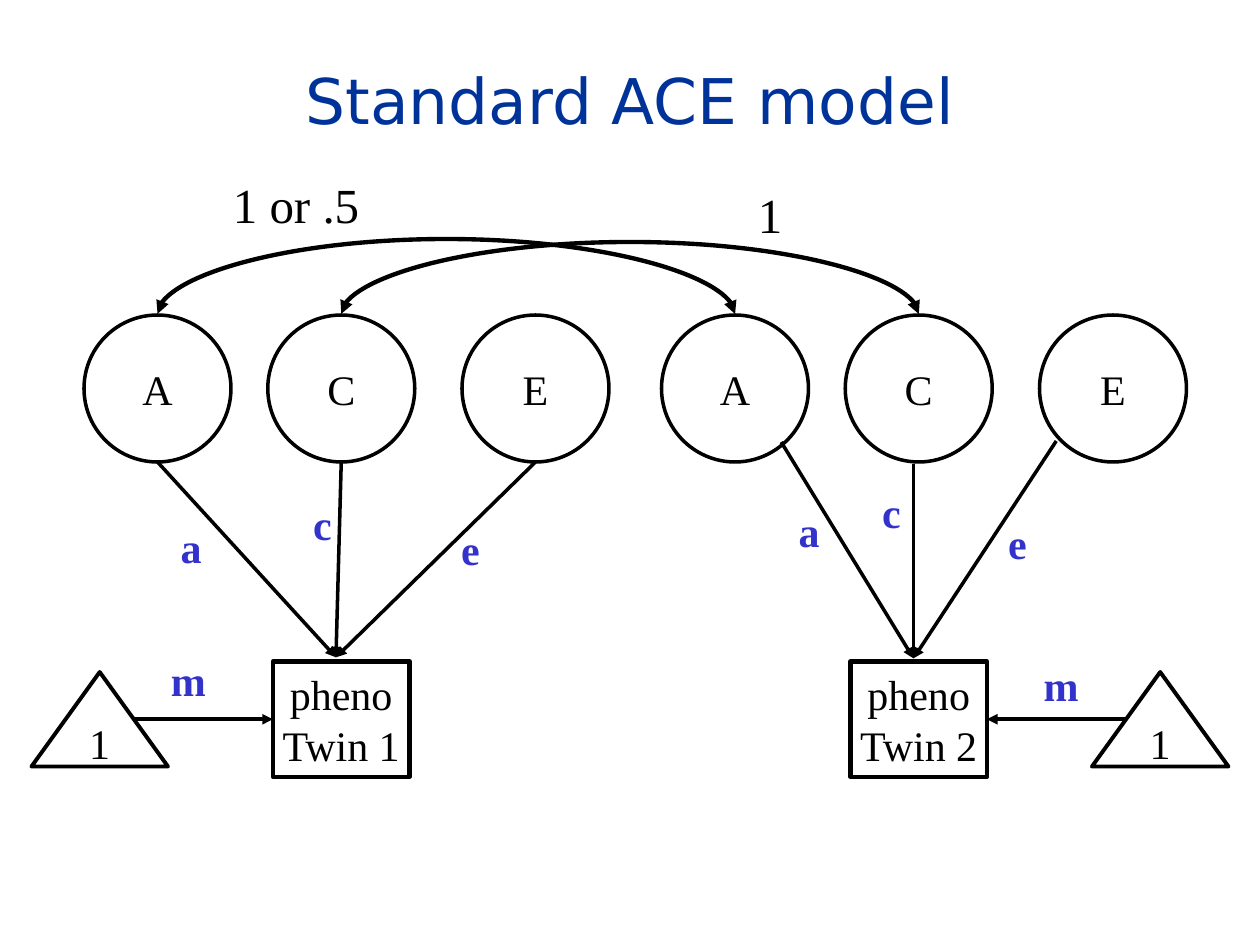
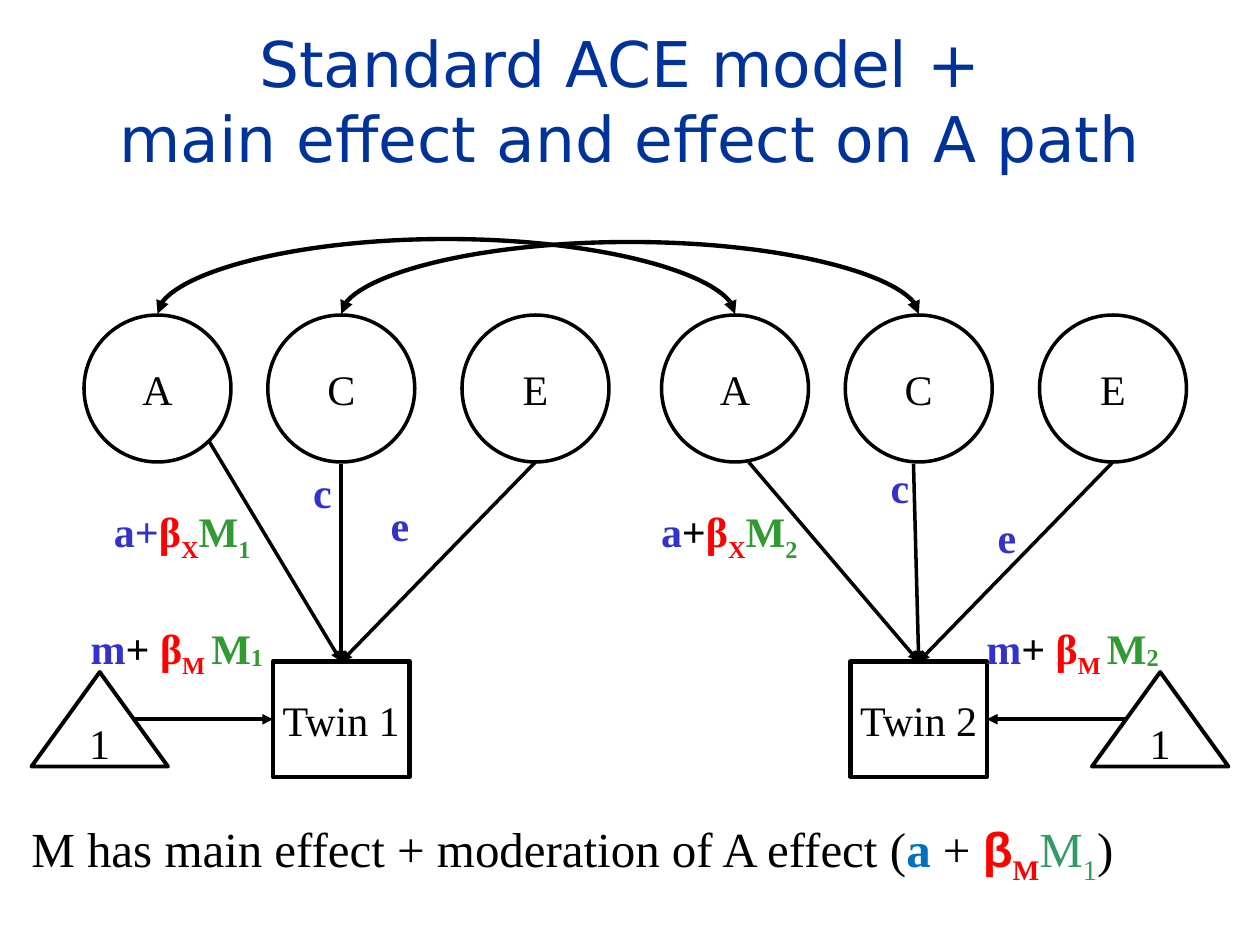
from lxml import etree
from pptx import Presentation
from pptx import util as u
from pptx.dml.color import RGBColor
from pptx.enum import shapes, text
from pptx.oxml import ns

COLUMNS = 120
TWIN_SHIFT = 55
BOX_TOP, BOX_SIDES = 0, (1, 3)

BLACK = RGBColor(0x00, 0x00, 0x00)
WHITE = RGBColor(0xFF, 0xFF, 0xFF)
NAVY = RGBColor(0x00, 0x33, 0x99)
VIOLET = RGBColor(0x33, 0x33, 0xCC)
RED = RGBColor(0xFF, 0x00, 0x00)
GREEN = RGBColor(0x33, 0x99, 0x33)
SEA_GREEN = RGBColor(0x33, 0x99, 0x66)
BLUE = RGBColor(0x00, 0x70, 0xC0)

SERIF = "Times New Roman"
TITLE = {"name": "DejaVu Sans", "size": u.Pt(36)}
NODE = {"name": SERIF, "size": u.Pt(24)}
LABEL = {**NODE, "bold": True}
NOTE = {"name": SERIF, "size": u.Pt(28)}
STRONG_NOTE = {**NOTE, "bold": True}
MIDDLE = text.MSO_ANCHOR.MIDDLE
CENTER = text.PP_ALIGN.CENTER


class PathDiagram:
    def __init__(self):
        self.deck = Presentation()
        self.deck.slide_width, self.deck.slide_height = u.Inches(10), u.Inches(7.5)
        self.unit = self.deck.slide_width / COLUMNS
        self.page = None

    def grid(self, *lengths):
        return [u.Emu(round(length * self.unit)) for length in lengths]

    def dress(self, span, style, colour):
        for name, value in style.items():
            setattr(span.font, name, value)
        span.font.color.rgb = colour

    def add_span(self, para, words, style, colour, baseline=0):
        span = para.add_run()
        span.text = words
        self.dress(span, style, colour)
        if baseline:
            span.font._element.set("baseline", str(baseline * 1000))

    def frame(self, shape, **settings):
        for name, value in settings.items():
            setattr(shape.text_frame, name, value)
        return shape.text_frame

    def new_page(self, title):
        self.page = self.deck.slides.add_slide(self.deck.slide_layouts[5])
        box = self.page.shapes.title
        box.left, box.top, box.width, box.height = self.grid(9, 2, 102, 15)
        frame = self.frame(box, text=title, vertical_anchor=MIDDLE,
                           auto_size=text.MSO_AUTO_SIZE.NONE)
        para = frame.paragraphs[0]
        para.alignment = CENTER
        for span in para.runs:
            self.dress(span, TITLE, NAVY)

    def node(self, kind, place, lines, weight):
        shape = self.page.shapes.add_shape(kind, *self.grid(*place))
        shape.shadow.inherit = False
        shape.fill.solid()
        shape.fill.fore_color.rgb = WHITE
        shape.line.color.rgb = BLACK
        shape.line.width = u.Pt(weight)
        frame = self.frame(shape, word_wrap=False, vertical_anchor=MIDDLE)
        for index, words in enumerate(lines):
            para = frame.add_paragraph() if index else frame.paragraphs[0]
            para.alignment = CENTER
            self.add_span(para, words, NODE, BLACK)
        return shape

    def label(self, left, top, width, spans, wrap=False):
        box = self.page.shapes.add_textbox(*self.grid(left, top, width, 6))
        frame = self.frame(box, word_wrap=wrap, vertical_anchor=MIDDLE,
                           auto_size=text.MSO_AUTO_SIZE.SHAPE_TO_FIT_TEXT)
        frame.paragraphs[0].alignment = CENTER
        for words, *look in spans:
            self.add_span(frame.paragraphs[0], words, LABEL, *look)

    def note(self, left, top, width, spans):
        box = self.page.shapes.add_textbox(*self.grid(left, top, width, 6.8))
        frame = self.frame(box, word_wrap=False,
                           auto_size=text.MSO_AUTO_SIZE.SHAPE_TO_FIT_TEXT)
        for words, *look in spans:
            self.add_span(frame.paragraphs[0], words, *look)

    def finish_line(self, line, weight, ends):
        line.line.color.rgb = BLACK
        line.line.width = u.Pt(weight)
        outline = line._element.spPr.find(ns.qn("a:ln"))
        for end in ends:
            etree.SubElement(outline, ns.qn(f"a:{end}"), type="triangle")
        etree.SubElement(line._element.spPr, ns.qn("a:effectLst"))

    def arrow(self, start, end, box=None, side=BOX_TOP):
        line = self.page.shapes.add_connector(
            shapes.MSO_CONNECTOR.STRAIGHT, *self.grid(*start, *end))
        if box is not None:
            line.end_connect(box, side)
        self.finish_line(line, 2, ["tailEnd"])

    def arc(self, left, reach):
        center, half, level = left + TWIN_SHIFT / 2, TWIN_SHIFT / 2, 29.9
        x, bottom, top = self.grid(center, level + half, level - half)
        line = self.page.shapes.add_connector(
            shapes.MSO_CONNECTOR.CURVE, x, bottom, x + u.Pt(0.125), top)
        outline = line._element.spPr
        outline.find(ns.qn("a:xfrm")).set("rot", str(90 * 60000))
        guides = outline.find(ns.qn("a:prstGeom")).find(ns.qn("a:avLst"))
        etree.SubElement(guides, ns.qn("a:gd"), name="adj1", fmla=f"val {-reach * 100000}")
        self.finish_line(line, 2.5, ["headEnd", "tailEnd"])

    def twins(self, box_lines):
        boxes = []
        for twin in range(2):
            shift = twin * TWIN_SHIFT
            for letter, left in (("A", 8), ("C", 25.5), ("E", 44)):
                self.node(shapes.MSO_SHAPE.OVAL, (left + shift, 30, 14, 14), [letter], 2)
            box = self.node(shapes.MSO_SHAPE.RECTANGLE, (26 + shift, 63, 13, 11),
                            [*box_lines, f"Twin {twin + 1}"], 2.5)
            mean_left = (3, COLUMNS - 16)[twin]
            self.node(shapes.MSO_SHAPE.ISOSCELES_TRIANGLE, (mean_left, 64, 13, 9), ["1"], 2.25)
            start, end = ((12.75, 26), (107.25, 94))[twin]
            self.arrow((start, 68.5), (end, 68.5), box, BOX_SIDES[twin])
            boxes.append(box)
        self.arc(15, 377)
        self.arc(32.5, 362)
        return boxes

    def path_labels(self, places):
        for letter, left, top in places:
            self.label(left, top, 4.2, [(letter, VIOLET)])


def standard_model(diagram):
    diagram.new_page("Standard ACE model")
    diagram.twins(["pheno"])
    for end, starts in (
        ((32, 62.6), ((15, 44), (32.5, 44), (51, 44))),
        ((87, 62.7), ((74.4, 42.1), (87, 44.2), (100.6, 42))),
    ):
        for start in starts:
            diagram.arrow(start, end)
    diagram.path_labels([("c", 28.6, 46.9), ("e", 42.7, 49.3),
                         ("c", 82.8, 45.7), ("e", 94.8, 48.7)])
    for words, left, top, width in (("a", 10.9, 49.1, 14.6), ("a", 70.2, 47.5, 13.7),
                                    ("m ", 8.6, 61.7, 19.7), ("m", 91.2, 62.2, 19.7)):
        diagram.label(left, top, width, [(words, VIOLET)], wrap=True)
    diagram.note(71, 17, 4.8, [("1", NOTE, BLACK)])
    diagram.note(21, 16, 14.6, [("1 or .5", NOTE, BLACK)])


def moderated_model(diagram):
    diagram.new_page("Standard ACE model + \vmain effect and effect on A path")
    boxes = diagram.twins([])
    for box, end, starts in zip(boxes, (32.5, 87.5), (
        ((19.9, 42), (32.5, 44.2), (51, 44)),
        ((71.3, 44), (87, 44.2), (106, 44)),
    )):
        for start in starts:
            diagram.arrow(start, (end, 63), box)
    diagram.path_labels([("c", 28.6, 43.8), ("e", 36, 47),
                         ("c", 83.6, 43.4), ("e", 93.8, 48.1)])
    path_starts = [("a+", VIOLET)], [("a", VIOLET), ("+", BLACK)]
    for number, path_left, mean_left, path_start in zip(
            "12", (9, 61.1), (7, 92.3), path_starts):
        diagram.label(path_left, 47.9, 16.7, [
            *path_start, ("β", RED), ("X", RED, -25),
            ("M", GREEN), (number, GREEN, -25)], wrap=True)
        diagram.label(mean_left, 59, 19.7, [
            ("m", VIOLET), ("+", BLACK), (" β", RED), ("M ", RED, -25),
            ("M", GREEN), (number, GREEN, -6)], wrap=True)
    diagram.note(1.8, 77.4, 108.4, [
        ("M has main effect + moderation of A effect (", NOTE, BLACK),
        ("a", STRONG_NOTE, BLUE),
        (" + ", NOTE, BLACK),
        ("β", {**STRONG_NOTE, "name": "Arial"}, RED),
        ("M", STRONG_NOTE, RED, -25),
        ("M", NOTE, SEA_GREEN),
        ("1", NOTE, SEA_GREEN, -25),
        (")", NOTE, BLACK)])


def main():
    diagram = PathDiagram()
    standard_model(diagram)
    moderated_model(diagram)
    diagram.deck.save("out.pptx")


if __name__ == "__main__":
    main()
